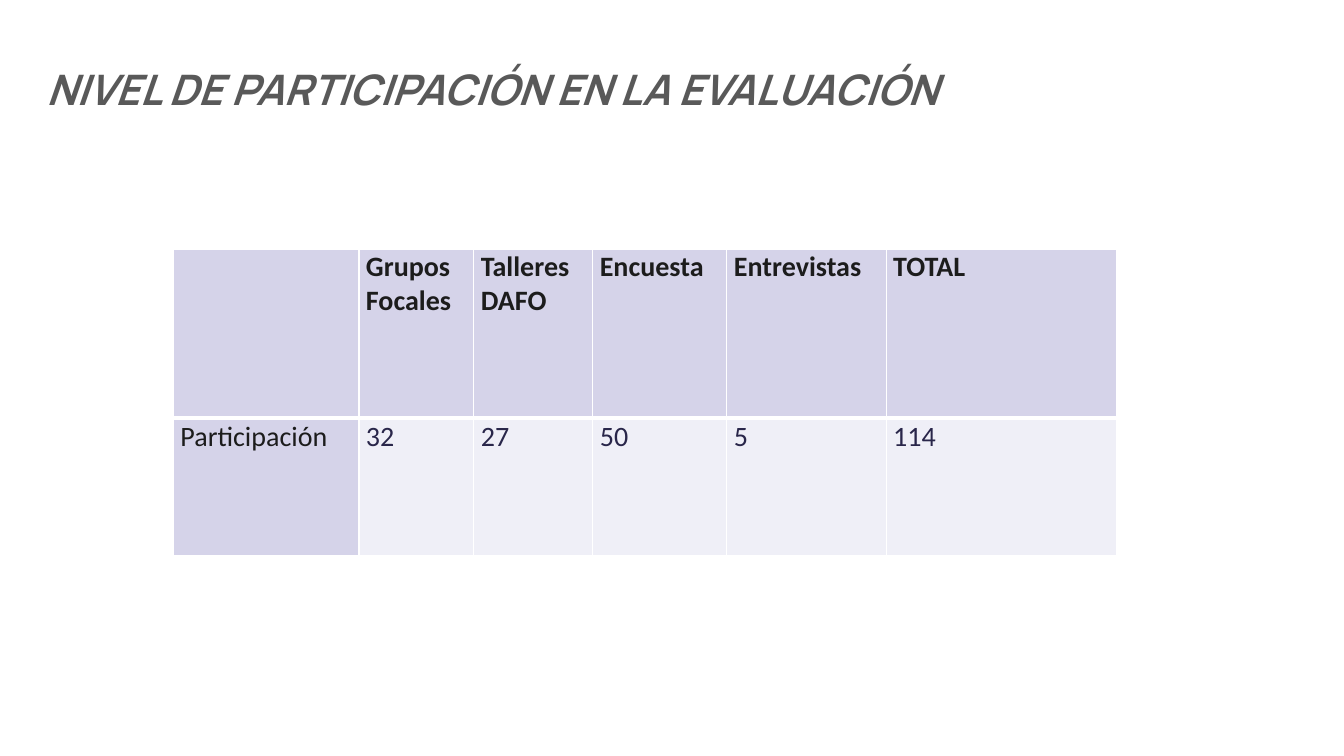
from lxml.etree import SubElement
from pptx import Presentation
from pptx.dml.color import RGBColor
from pptx.enum.text import MSO_AUTO_SIZE
from pptx.oxml.ns import qn
from pptx.util import Inches, Pt

HEADS = ["", "Grupos Focales", "Talleres DAFO", "Encuesta", "Entrevistas", "TOTAL"]
COUNTS = ["Participación", "32", "27", "50", "5", "114"]
WIDTHS = [1.84, 1.14, 1.18, 1.33, 1.58, 2.29]
HEIGHTS = [1.68, 1.36]


def color(code):
    """Turn a hex string into a colour."""
    return RGBColor.from_string(code)


def write(frame, text, code, margins, **style):
    """Put one styled run of text into a frame."""
    sides = ("left", "top", "right", "bottom")
    for side, gap in zip(sides, margins):
        setattr(frame, f"margin_{side}", Inches(gap))
    target = frame.text_frame if hasattr(frame, "text_frame") else frame
    run = target.paragraphs[0].add_run()
    run.text = text
    for name, value in style.items():
        setattr(run.font, name, value)
    run.font.color.rgb = color(code)


def edge(cell, widths):
    """Draw white borders of the given widths around a cell."""
    props = cell._tc.get_or_add_tcPr()
    for spot, (side, width) in enumerate(widths.items()):
        line = SubElement(props, qn(f"a:ln{side}"), w=str(Pt(width)))
        fill = SubElement(line, qn("a:solidFill"))
        SubElement(fill, qn("a:srgbClr"), val="FFFFFF")
        props.insert(spot, line)


def title(slide, left, top, width, height):
    """Place the slide heading in its box."""
    box = slide.shapes.add_textbox(*map(Inches, (left, top, width, height)))
    frame = box.text_frame
    frame.word_wrap = True
    frame.auto_size = MSO_AUTO_SIZE.SHAPE_TO_FIT_TEXT
    write(frame, "NIVEL DE PARTICIPACIÓN EN LA EVALUACIÓN", "595959", (0, 0, 0, 0),
          name="Manrope", size=Pt(30), bold=True, italic=True)


def table(slide, left, top):
    """Place the participation table at its corner."""
    size = sum(WIDTHS), sum(HEIGHTS)
    grid = slide.shapes.add_table(len(HEIGHTS), len(WIDTHS),
                                  *map(Inches, (left, top, *size))).table
    for col, width in zip(grid.columns, WIDTHS):
        col.width = Inches(width)
    for row, height in zip(grid.rows, HEIGHTS):
        row.height = Inches(height)
    for r, words in enumerate((HEADS, COUNTS)):
        for c, text in enumerate(words):
            cell = grid.cell(r, c)
            label = r == 0 or c == 0
            cell.fill.solid()
            cell.fill.fore_color.rgb = color("D5D3E9" if label else "EFEFF7")
            edge(cell, {"L": 1, "R": 1, "T": 3 if r else 1, "B": 1 if r else 3})
            if text:
                write(cell, text, "1C1C1C" if label else "29264A",
                      (0.07, 0.01, 0.07, 0), name="Calibri", size=Pt(20), bold=r == 0)


def main():
    """Build and save the slide."""
    deck = Presentation()
    deck.slide_width, deck.slide_height = Inches(13.33), Inches(7.5)
    slide = deck.slides.add_slide(deck.slide_layouts[6])
    table(slide, 1.72, 2.47)
    title(slide, 0.46, 0.63, 12.48, 0.51)
    deck.save("out.pptx")


if __name__ == "__main__":
    main()
